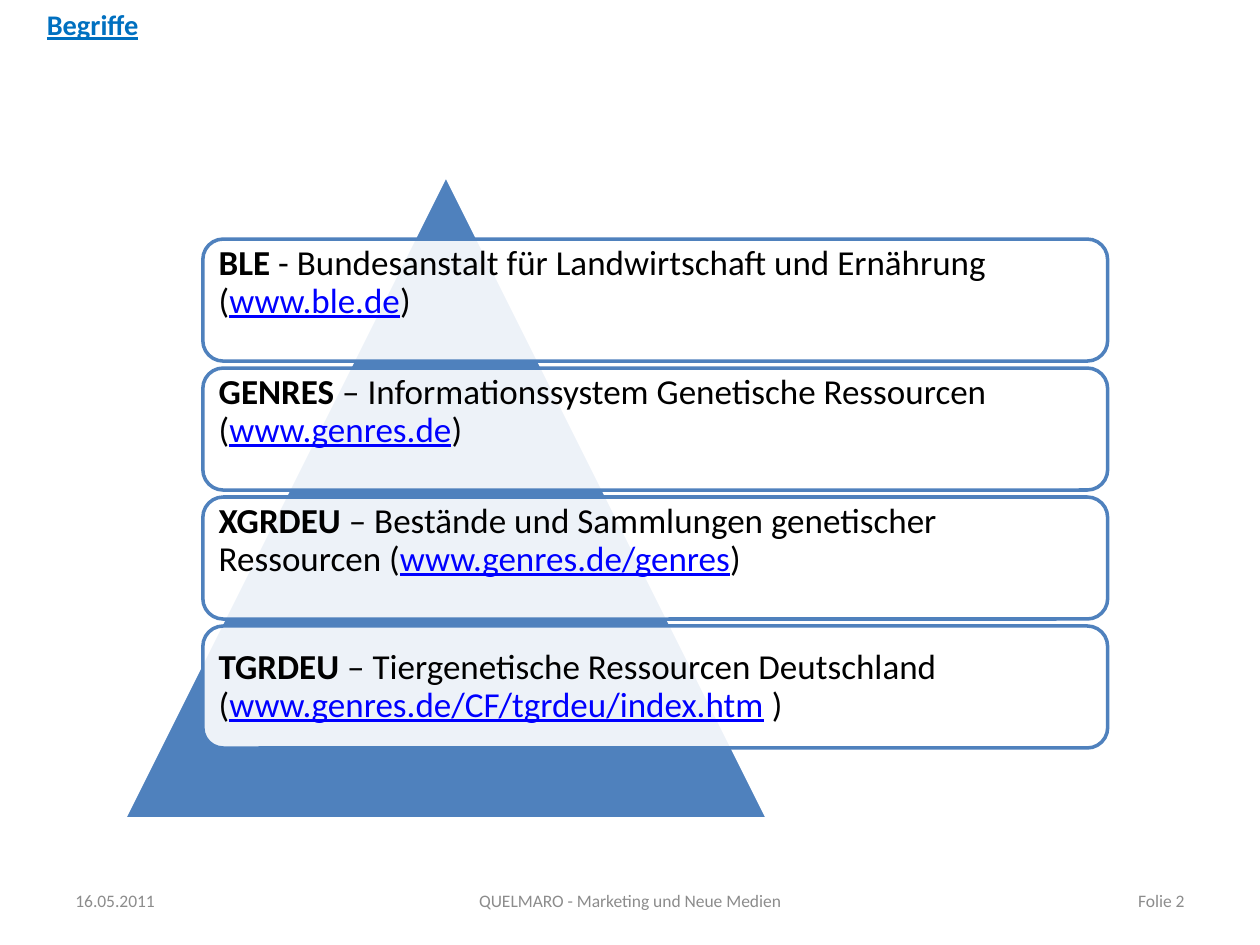
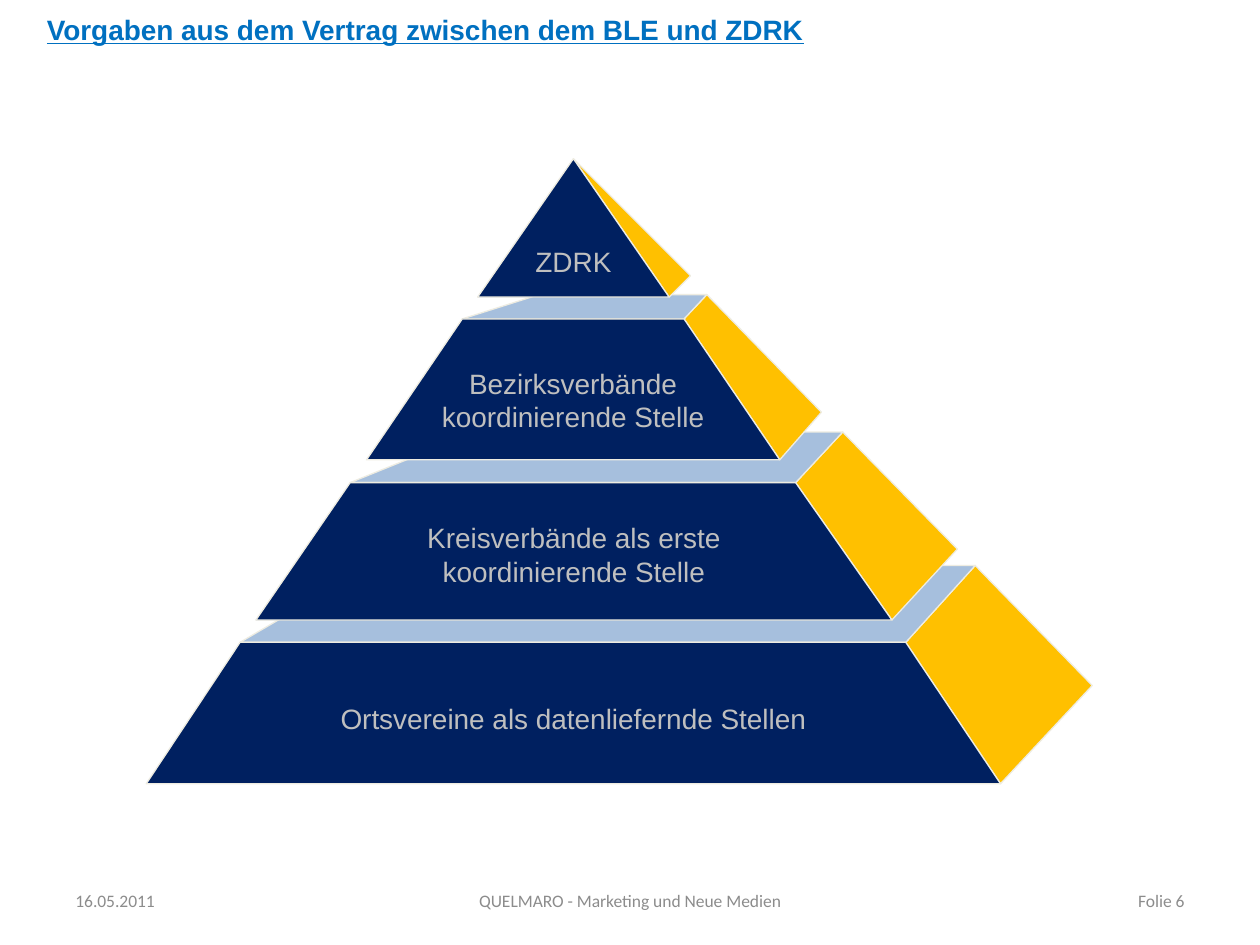
from dataclasses import dataclass

from lxml import etree
from pptx import Presentation
from pptx.dml.color import RGBColor
from pptx.enum.shapes import MSO_SHAPE
from pptx.enum.text import MSO_ANCHOR, PP_ALIGN
from pptx.oxml.ns import qn
from pptx.shapes.autoshape import Shape
from pptx.slide import Slide
from pptx.text.text import TextFrame, _Paragraph
from pptx.util import Cm, Pt

TRIANGLE = MSO_SHAPE.ISOSCELES_TRIANGLE
ROUNDED = MSO_SHAPE.ROUNDED_RECTANGLE
TOP, MIDDLE = MSO_ANCHOR.TOP, MSO_ANCHOR.MIDDLE
LEFT, CENTER, RIGHT = PP_ALIGN.LEFT, PP_ALIGN.CENTER, PP_ALIGN.RIGHT
TITLE_ONLY = 5

COLORS = {
    "title": "0070C0",
    "footer": "8C8C8C",
    "blue": "4F81BD",
    "navy": "002060",
    "gold": "FFC000",
    "edge": "EEECE1",
    "label": "BFBFBF",
    "link": "0000FF",
    "black": "000000",
    "white": "FFFFFF",
}


@dataclass(frozen=True)
class Style:
    size: float
    color: str
    font: str = "Calibri"
    bold: bool = False
    underline: bool = False


@dataclass(frozen=True)
class FooterPart:
    left: float
    width: float
    alignment: PP_ALIGN
    text: str


@dataclass(frozen=True)
class Term:
    name: str
    meaning: str
    address: str
    ending: str = ")"
    anchor: MSO_ANCHOR = TOP


@dataclass(frozen=True)
class Tier:
    lines: tuple[str, ...]
    label_width: float
    label_middle: float
    left: float
    right: float
    bottom: float
    top_left: float
    top_right: float
    top: float
    back_left: float
    back_right: float
    back_top: float
    side_x: float
    side_y: float


FOOTER_STYLE = Style(10, "footer")
LABEL_STYLE = Style(16, "label", "Arial")
NAME_STYLE = Style(20, "black", bold=True)
MEANING_STYLE = Style(20, "black")
ADDRESS_STYLE = Style(20, "link", underline=True)

FOOTER_PARTS = (
    FooterPart(1.27, 5.93, LEFT, "16.05.2011"),
    FooterPart(8.68, 8.04, CENTER, "QUELMARO - Marketing und Neue Medien"),
    FooterPart(18.2, 5.93, RIGHT, "Folie {number}"),
)

TERMS = (
    Term("BLE", " - Bundesanstalt für Landwirtschaft und Ernährung (", "www.ble.de"),
    Term("GENRES", " – Informationssystem Genetische Ressourcen (", "www.genres.de"),
    Term("XGRDEU", " – Bestände und Sammlungen genetischer Ressourcen (",
         "www.genres.de/genres"),
    Term("TGRDEU", " – Tiergenetische Ressourcen Deutschland (",
         "www.genres.de/CF/tgrdeu/index.htm", " )", MIDDLE),
)
TERM_TOP, TERM_PITCH = 4.82, 2.6

TIERS = (
    Tier(("Ortsvereine als datenliefernde Stellen",), 13.26, 14.48,
         2.95, 20.17, 15.8, 4.84, 18.26, 12.95, 7.49, 19.66, 11.4, 22.02, 13.82),
    Tier(("Kreisverbände als erste koordinierende Stelle",), 9.14, 11.18,
         5.16, 17.98, 12.5, 7.06, 16.04, 9.73, 9.58, 16.99, 8.71, 19.3, 11.07),
    Tier(("Bezirksverbände", "koordinierende Stelle"), 6.15, 8.06,
         7.39, 15.72, 9.27, 9.32, 13.79, 6.43, 10.87, 14.25, 5.94, 16.56, 8.31),
    Tier(("ZDRK",), 1.8, 5.27,
         9.63, 13.49, 5.99, 11.56, 11.56, 3.2, 11.56, 11.56, 3.2, 13.92, 5.56),
)


def color(name: str) -> RGBColor:
    return RGBColor.from_string(COLORS[name])


def add_run(paragraph: _Paragraph, text: str, style: Style) -> None:
    run = paragraph.add_run()
    run.text = text
    run.font.name = style.font
    run.font.size = Pt(style.size)
    run.font.bold = style.bold
    run.font.underline = style.underline
    run.font.color.rgb = color(style.color)


def set_insets(frame: TextFrame, side: float, top: float) -> None:
    frame.margin_left = frame.margin_right = Cm(side)
    frame.margin_top = frame.margin_bottom = Cm(top)


def add_text_box(slide: Slide, left: float, top: float, width: float,
                 height: float, alignment: PP_ALIGN) -> TextFrame:
    box = slide.shapes.add_textbox(Cm(left), Cm(top), Cm(width), Cm(height))
    frame = box.text_frame
    frame.word_wrap = True
    frame.vertical_anchor = MIDDLE
    frame.paragraphs[0].alignment = alignment
    return frame


def paint(shape: Shape, fill: str, line: str, line_width: float,
          opacity: int = 100) -> None:
    shape.shadow.inherit = False
    shape.fill.solid()
    shape.fill.fore_color.rgb = color(fill)
    shape.line.color.rgb = color(line)
    shape.line.width = Pt(line_width)
    if opacity < 100:
        fill_color = shape._element.spPr.find(qn("a:solidFill"))[0]
        etree.SubElement(fill_color, qn("a:alpha"), val=str(opacity * 1000))


def start_slide(presentation: Presentation, title: str, style: Style,
                width: float, height: float, number: int) -> Slide:
    slide = presentation.slides.add_slide(presentation.slide_layouts[TITLE_ONLY])
    placeholder = slide.shapes.title
    placeholder.left, placeholder.top = Cm(0.69), Cm(0)
    placeholder.width, placeholder.height = Cm(width), Cm(height)
    frame = placeholder.text_frame
    frame.vertical_anchor = MIDDLE
    frame.paragraphs[0].alignment = LEFT
    add_run(frame.paragraphs[0], title, style)
    for part in FOOTER_PARTS:
        frame = add_text_box(slide, part.left, 17.65, part.width, 1.02, part.alignment)
        add_run(frame.paragraphs[0], part.text.format(number=number), FOOTER_STYLE)
    return slide


def add_term(slide: Slide, term: Term, top: float) -> None:
    card = slide.shapes.add_shape(ROUNDED, Cm(4.09), Cm(top), Cm(18.24), Cm(2.46))
    paint(card, "white", "blue", 2, opacity=90)
    frame = card.text_frame
    frame.word_wrap = True
    frame.vertical_anchor = term.anchor
    set_insets(frame, 0.2, 0 if term.anchor == TOP else 0.2)
    paragraph = frame.paragraphs[0]
    paragraph.alignment = LEFT
    paragraph.line_spacing = 0.9
    add_run(paragraph, term.name, NAME_STYLE)
    add_run(paragraph, term.meaning, MEANING_STYLE)
    add_run(paragraph, term.address, ADDRESS_STYLE)
    add_run(paragraph, term.ending, MEANING_STYLE)


def add_face(slide: Slide, corners: list[tuple[float, float]], fill: str,
             opacity: int = 100) -> None:
    start, *others = [(Cm(x), Cm(y)) for x, y in dict.fromkeys(corners)]
    builder = slide.shapes.build_freeform(*start)
    builder.add_line_segments(others, close=True)
    paint(builder.convert_to_shape(), fill, "edge", 0.75, opacity)


def add_tier(slide: Slide, tier: Tier) -> None:
    bottom_left, bottom_right = (tier.left, tier.bottom), (tier.right, tier.bottom)
    top_left, top_right = (tier.top_left, tier.top), (tier.top_right, tier.top)
    back_left = (tier.back_left, tier.back_top)
    back_right = (tier.back_right, tier.back_top)
    side = (tier.side_x, tier.side_y)
    add_face(slide, [bottom_right, top_right, back_right, side], "gold")
    if top_left != top_right:
        add_face(slide, [top_left, top_right, back_right, back_left], "blue", 50)
    add_face(slide, [bottom_left, bottom_right, top_right, top_left], "navy")

    center = (tier.left + tier.right) / 2
    frame = add_text_box(slide, center - tier.label_width / 2,
                         tier.label_middle - 0.35, tier.label_width, 0.7, CENTER)
    set_insets(frame, 0, 0)
    paragraph = frame.paragraphs[0]
    for index, line in enumerate(tier.lines):
        if index:
            paragraph.add_line_break()
        add_run(paragraph, line, LABEL_STYLE)


def add_terms_slide(presentation: Presentation) -> None:
    style = Style(16.2, "title", bold=True, underline=True)
    slide = start_slide(presentation, "Begriffe", style, 3.12, 0.97, 2)
    triangle = slide.shapes.add_shape(TRIANGLE, Cm(2.5), Cm(3.53), Cm(12.98), Cm(12.98))
    paint(triangle, "blue", "white", 2)
    for index, term in enumerate(TERMS):
        add_term(slide, term, TERM_TOP + index * TERM_PITCH)


def add_pyramid_slide(presentation: Presentation) -> None:
    style = Style(16, "title", "Arial", bold=True, underline=True)
    slide = start_slide(presentation, "Vorgaben aus dem Vertrag zwischen dem BLE und ZDRK",
                        style, 19.84, 1.17, 6)
    for tier in TIERS:
        add_tier(slide, tier)


def main() -> None:
    presentation = Presentation()
    presentation.slide_width, presentation.slide_height = Cm(25.4), Cm(19.05)
    add_terms_slide(presentation)
    add_pyramid_slide(presentation)
    presentation.save("out.pptx")


if __name__ == "__main__":
    main()
